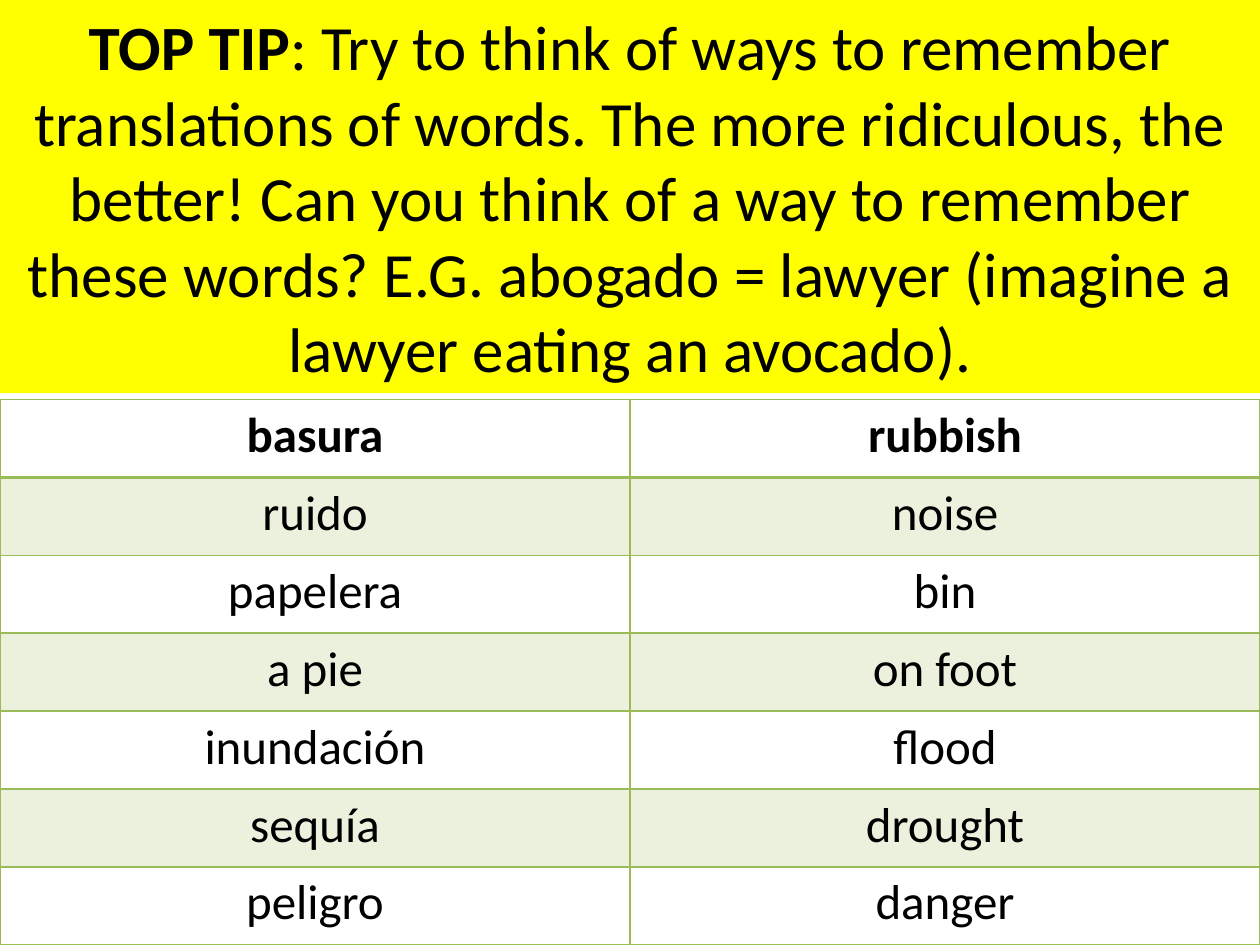
"""Builds a vocabulary slide with a memory tip above a Spanish-English word table."""
import pptx
import pptx.dml.color
import pptx.enum.text
import pptx.oxml
import pptx.oxml.ns
import pptx.util

BLACK = pptx.dml.color.RGBColor(0x00, 0x00, 0x00)
YELLOW = pptx.dml.color.RGBColor(0xFF, 0xFF, 0x00)
GREEN = pptx.dml.color.RGBColor(0x9B, 0xBB, 0x59)

TIP_LABEL = "TOP TIP"
TIP = (
    ": Try to think of ways to remember translations of words. "
    "The more ridiculous, the better! Can you think of a way to remember these words? "
    "E.G. abogado = lawyer (imagine a lawyer eating an avocado)."
)
VOCABULARY = [
    ("basura", "rubbish"),
    ("ruido", "noise"),
    ("papelera", "bin"),
    ("a pie", "on foot"),
    ("inundación", "flood"),
    ("sequía", "drought"),
    ("peligro", "danger"),
]


class VocabularySlide:
    font = "Calibri"
    tip_size = 36
    word_size = 28
    band_opacity = 20

    def __init__(self, deck):
        self.width, self.height = deck.slide_width, deck.slide_height
        self.slide = deck.slides.add_slide(deck.slide_layouts[5])

    def format_paragraph(self, paragraph, size):
        paragraph.alignment = pptx.enum.text.PP_ALIGN.CENTER
        paragraph.font.name = self.font
        paragraph.font.size = pptx.util.Pt(size)
        paragraph.font.color.rgb = BLACK

    def add_tip(self, label, tip, share):
        title = self.slide.shapes.title
        title.left, title.top = 0, 0
        title.width, title.height = self.width, int(self.height * share)
        title.fill.solid()
        title.fill.fore_color.rgb = YELLOW
        frame = title.text_frame
        frame.word_wrap = True
        frame.auto_size = pptx.enum.text.MSO_AUTO_SIZE.NONE
        frame.vertical_anchor = pptx.enum.text.MSO_ANCHOR.MIDDLE
        paragraph = frame.paragraphs[0]
        self.format_paragraph(paragraph, self.tip_size)
        for text, bold in ((label, True), (tip, False)):
            run = paragraph.add_run()
            run.text = text
            run.font.bold = bold

    def add_vocabulary(self, pairs, top_share):
        top = int(self.height * top_share)
        table = self.slide.shapes.add_table(
            len(pairs), len(pairs[0]), 0, top, self.width, self.height - top
        ).table
        for row, pair in enumerate(pairs):
            for column, word in enumerate(pair):
                self.format_cell(table.cell(row, column), word, row)

    def format_cell(self, cell, word, row):
        cell.text = word
        paragraph = cell.text_frame.paragraphs[0]
        self.format_paragraph(paragraph, self.word_size)
        paragraph.font.bold = row == 0
        if row % 2:
            cell.fill.solid()
            cell.fill.fore_color.rgb = GREEN
            self.set_opacity(cell, self.band_opacity)
        else:
            cell.fill.background()
        top, bottom = (2 if row == 1 else 1), (2 if row == 0 else 1)
        self.set_borders(cell, {"L": 1, "R": 1, "T": top, "B": bottom})

    def set_opacity(self, cell, percent):
        tint = cell._tc.tcPr.find(".//" + pptx.oxml.ns.qn("a:srgbClr"))
        alpha = pptx.oxml.parse_xml(
            f'<a:alpha {pptx.oxml.ns.nsdecls("a")} val="{percent * 1000}"/>'
        )
        tint.append(alpha)

    def set_borders(self, cell, widths):
        properties = cell._tc.get_or_add_tcPr()
        for position, (side, points) in enumerate(widths.items()):
            border = pptx.oxml.parse_xml(
                f'<a:ln{side} {pptx.oxml.ns.nsdecls("a")} w="{pptx.util.Pt(points)}">'
                f'<a:solidFill><a:srgbClr val="{GREEN}"/></a:solidFill></a:ln{side}>'
            )
            properties.insert(position, border)


def main():
    deck = pptx.Presentation()
    deck.slide_width = pptx.util.Inches(10)
    deck.slide_height = pptx.util.Inches(7.5)
    page = VocabularySlide(deck)
    page.add_tip(TIP_LABEL, TIP, 3.12 / 7.5)
    page.add_vocabulary(VOCABULARY, 3.17 / 7.5)
    deck.save("out.pptx")


if __name__ == "__main__":
    main()
